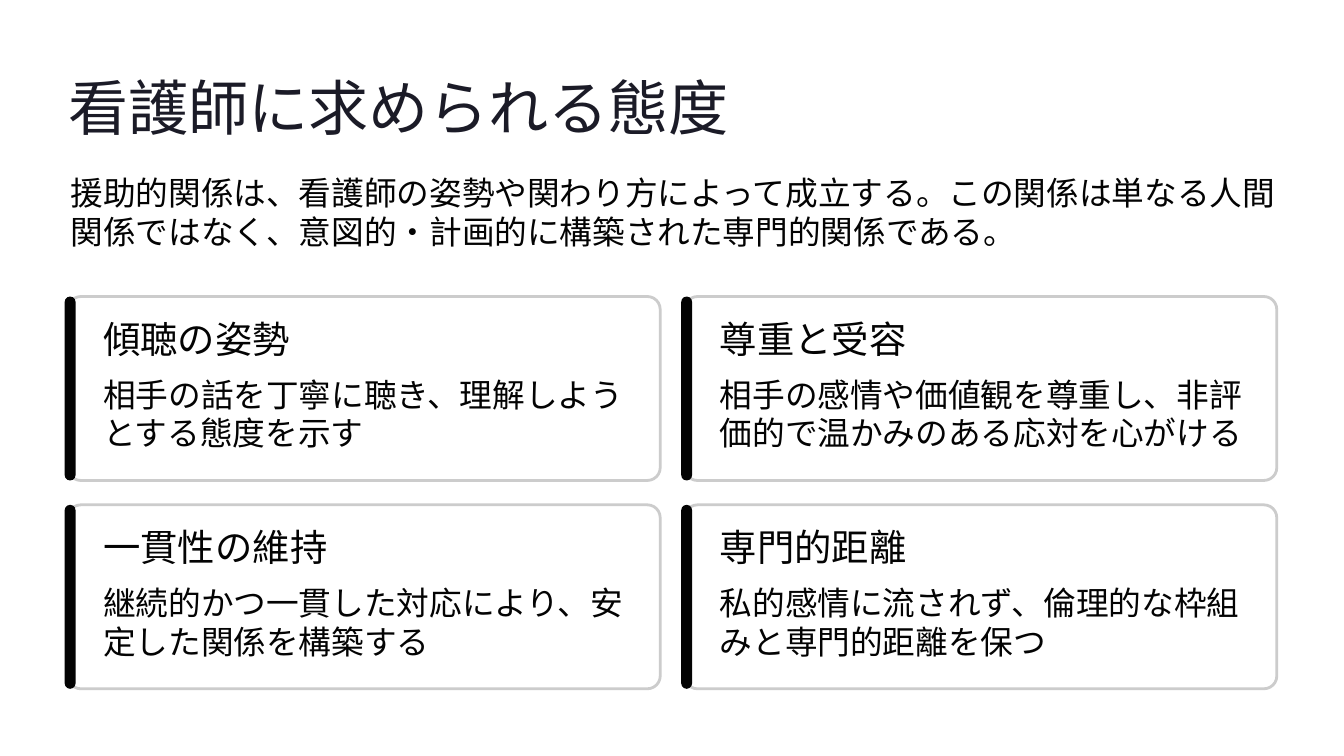
from dataclasses import dataclass

from lxml.etree import SubElement
from pptx import Presentation
from pptx.dml.color import RGBColor as Color
from pptx.enum.shapes import MSO_SHAPE as Form
from pptx.enum.text import MSO_ANCHOR as Anchor, MSO_AUTO_SIZE as Fit, PP_ALIGN as Align
from pptx.oxml.ns import qn
from pptx.util import Inches, Pt


@dataclass(frozen=True)
class Type:
    """Hold one kind of text."""
    font: str
    size: float
    lead: float
    ink: str


@dataclass(frozen=True)
class Theme:
    """Hold the colours and type sizes."""
    ink: str = "030303"
    paper: str = "FFFFFF"
    edge: str = "CCCCCC"
    title: Type = Type("Inter", 51.5, 64.5, "1B1B27")
    head: Type = Type("Inter", 32, 32, "030303")
    body: Type = Type("Roboto", 28, 33, "030303")


class Deck:
    """Draw elements on the current slide in one style."""

    def __init__(self, theme):
        """Start a deck with one slide."""
        self.theme = theme
        self.file = Presentation()
        self.file.slide_width, self.file.slide_height = Inches(16), Inches(9)
        self.slide = self.file.slides.add_slide(self.file.slide_layouts[1])

    def style(self, shape, text, kind, wrap=True):
        """Set and format the text of a shape."""
        frame = shape.text_frame
        frame.text = text
        frame.auto_size = Fit.NONE
        frame.word_wrap = wrap
        frame.vertical_anchor = Anchor.TOP
        frame.margin_left = frame.margin_right = 0
        frame.margin_top = frame.margin_bottom = 0
        for para in frame.paragraphs:
            para.alignment = Align.LEFT
            para.line_spacing = Pt(kind.lead)
            para.space_before = para.space_after = Pt(0)
            for run in para.runs:
                run.font.name = kind.font
                run.font.size = Pt(kind.size)
                run.font.color.rgb = Color.from_string(kind.ink)

    def place(self, shape, box):
        """Move a shape to a box in inches."""
        shape.left, shape.top, shape.width, shape.height = map(Inches, box)

    def title(self, text, box):
        """Fill the title placeholder."""
        shape = self.slide.shapes.title
        self.place(shape, box)
        self.style(shape, text, self.theme.title, False)

    def lead(self, text, box):
        """Fill the body placeholder with a plain paragraph."""
        shape = self.slide.placeholders[1]
        self.place(shape, box)
        self.style(shape, text, self.theme.body)
        for props in shape.element.iter(qn("a:pPr")):
            props.set("marL", "0")
            props.set("indent", "0")
            SubElement(props, qn("a:buNone"))

    def text(self, text, box, kind, wrap=True):
        """Add a text box."""
        shape = self.slide.shapes.add_textbox(*map(Inches, box))
        self.style(shape, text, kind, wrap)

    def block(self, box, fill, bend, edge=None, alpha=None):
        """Add a rounded block."""
        shape = self.slide.shapes.add_shape(Form.ROUNDED_RECTANGLE, *map(Inches, box))
        shape.shadow.inherit = False
        shape.adjustments[0] = bend
        shape.fill.solid()
        shape.fill.fore_color.rgb = Color.from_string(fill)
        if alpha:
            tint = shape.element.spPr.find(qn("a:solidFill"))[0]
            SubElement(tint, qn("a:alpha")).set("val", str(alpha * 1000))
        if edge:
            shape.line.color.rgb = Color.from_string(edge)
            shape.line.width = Pt(2.4)
        else:
            shape.line.fill.background()

    def card(self, left, top, head, body):
        """Add a card with a dark bar, a heading and a text."""
        look = self.theme
        self.block((left, top, 7.05, 2.19), look.paper, 0.07, look.edge, 95)
        self.block((left - 0.04, top, 0.13, 2.19), look.ink, 0.5)
        self.text(head, (left + 0.42, top + 0.32, 3.61, 0.45), look.head, False)
        self.text(body, (left + 0.42, top + 0.94, 6.3, 0.92), look.body)


CARDS = [
    ("傾聴の姿勢", "相手の話を丁寧に聴き、理解しようとする態度を示す"),
    ("尊重と受容", "相手の感情や価値観を尊重し、非評価的で温かみのある応対を心がける"),
    ("一貫性の維持", "継続的かつ一貫した対応により、安定した関係を構築する"),
    ("専門的距離", "私的感情に流されず、倫理的な枠組みと専門的距離を保つ"),
]


def main():
    """Build and save the slide."""
    deck = Deck(Theme())
    deck.title("看護師に求められる態度", (0.81, 0.8, 7.93, 0.9))
    deck.lead(
        "援助的関係は、看護師の姿勢や関わり方によって成立する。"
        "この関係は単なる人間関係ではなく、意図的・計画的に構築された専門的関係である。",
        (0.84, 2.07, 14.38, 0.92),
    )
    for spot, (head, body) in enumerate(CARDS):
        row, col = divmod(spot, 2)
        deck.card(0.81 + col * 7.34, 3.53 + row * 2.48, head, body)
    deck.file.save("out.pptx")


if __name__ == "__main__":
    main()
